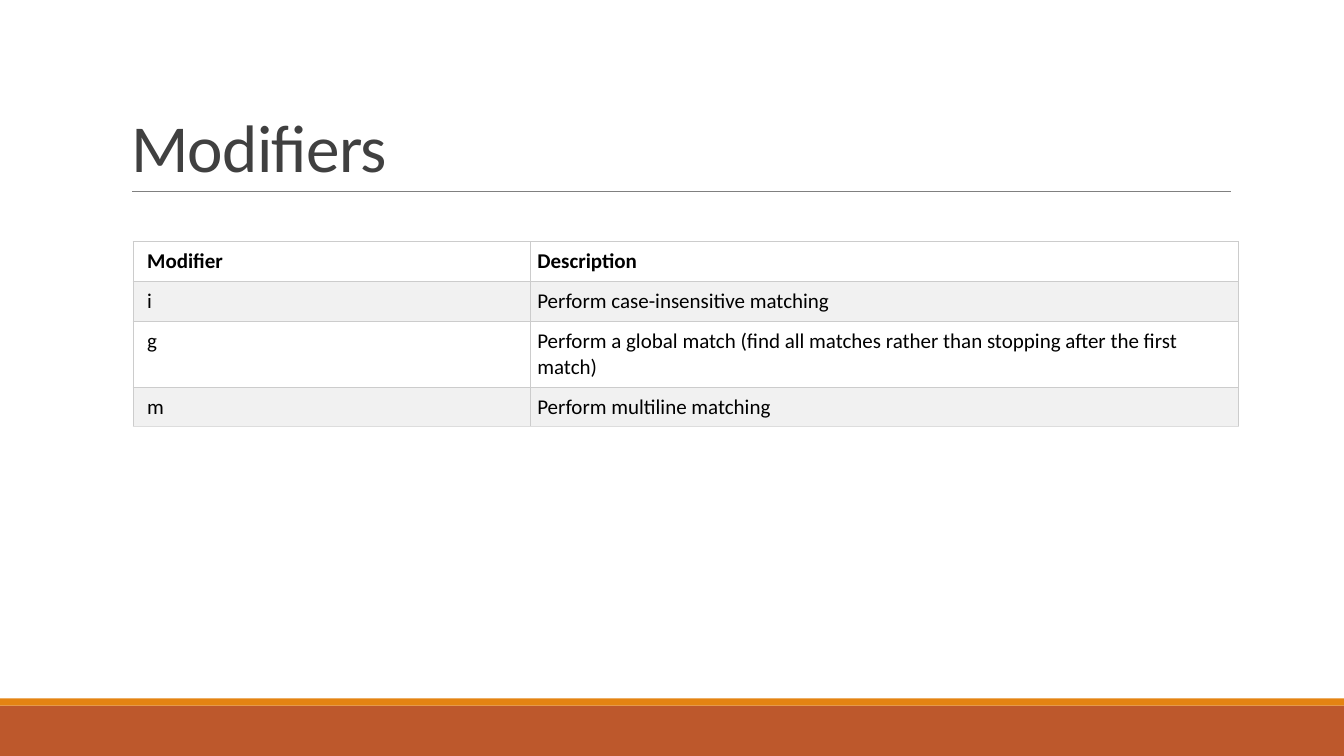
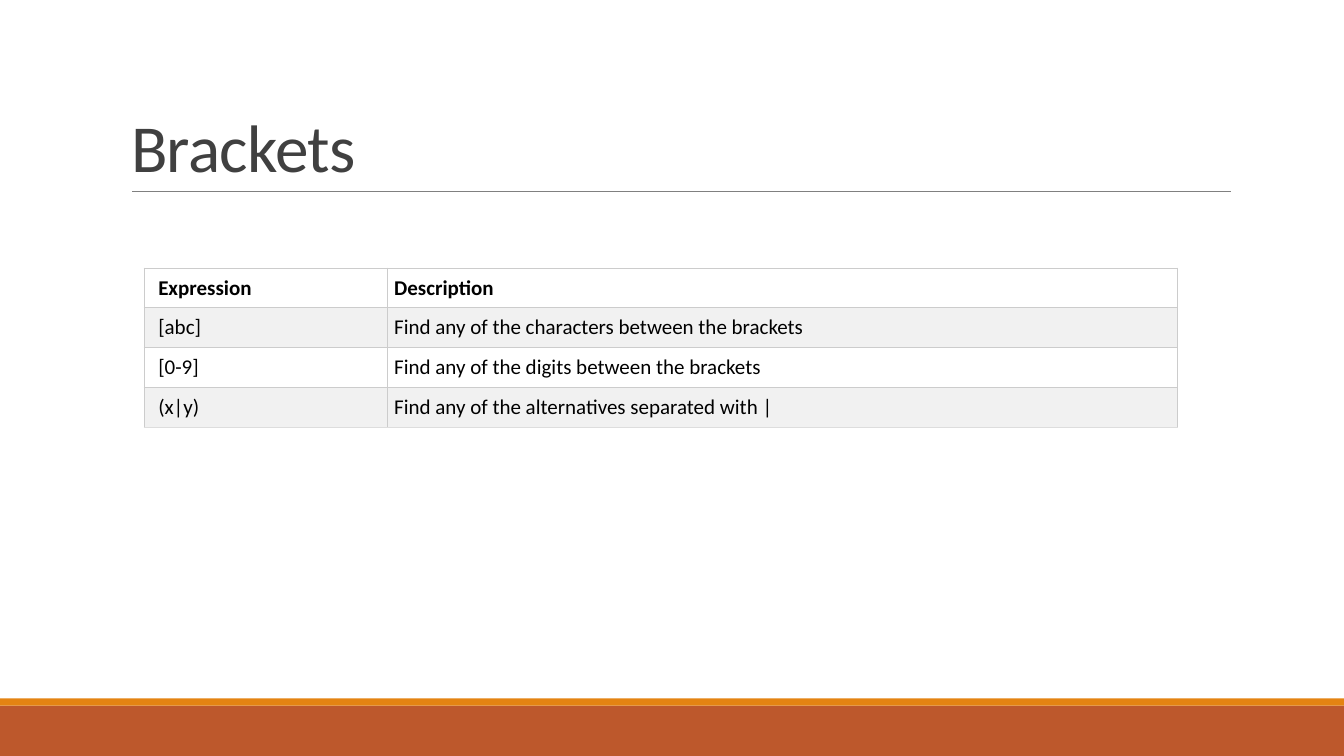
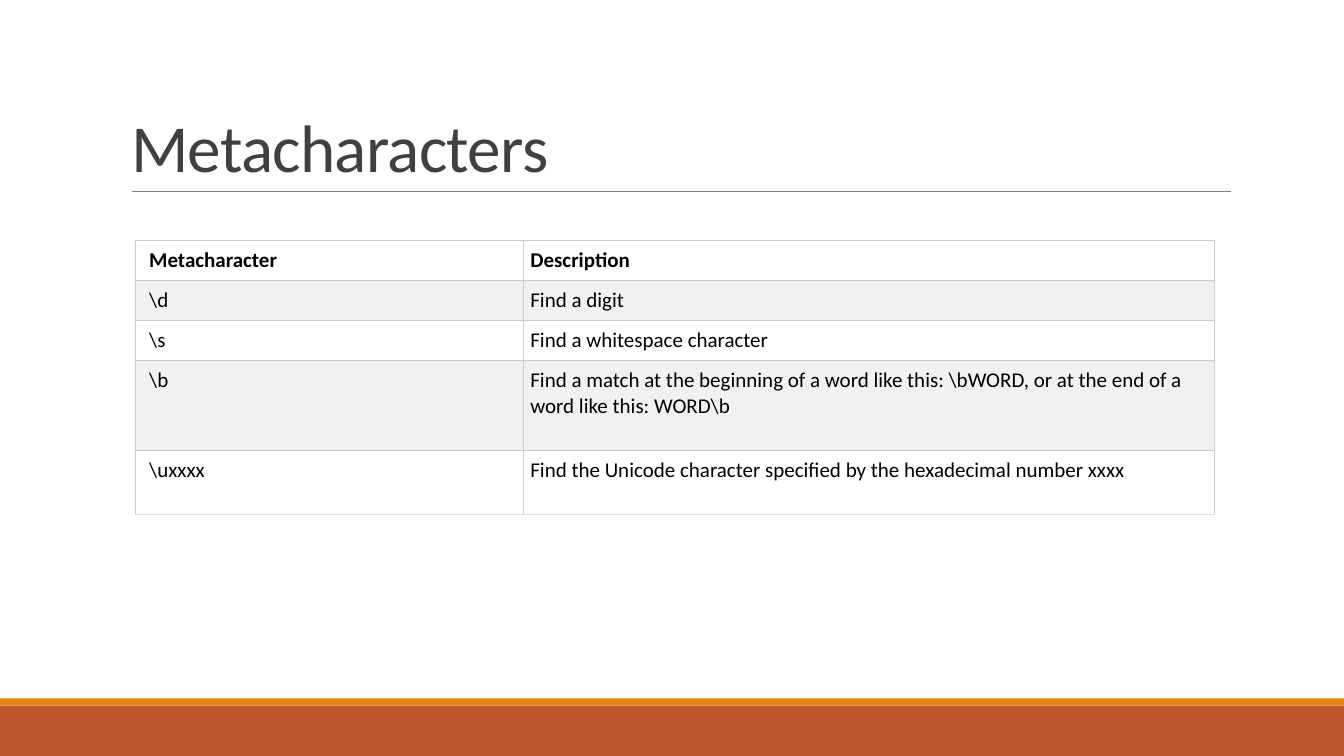
from dataclasses import dataclass

from lxml import etree
from pptx import Presentation
from pptx.dml.color import RGBColor
from pptx.enum.shapes import MSO_CONNECTOR, MSO_SHAPE
from pptx.enum.text import MSO_ANCHOR, MSO_AUTO_SIZE, PP_ALIGN
from pptx.oxml.ns import qn
from pptx.util import Pt

RECTANGLE = MSO_SHAPE.RECTANGLE
STRAIGHT = MSO_CONNECTOR.STRAIGHT
BOTTOM, TOP = MSO_ANCHOR.BOTTOM, MSO_ANCHOR.TOP
LEFT = PP_ALIGN.LEFT
NO_AUTOFIT = MSO_AUTO_SIZE.NONE
TITLE_ONLY = 5

SLIDES = [
    {
        "title": "Modifiers",
        "origin": (132, 240),
        "columns": (394, 702),
        "heights": (39, 39, 64, 39),
        "rows": [
            ("Modifier", "Description"),
            ("i", "Perform case-insensitive matching"),
            ("g", "Perform a global match (find all matches rather than stopping after the first match)"),
            ("m", "Perform multiline matching"),
        ],
    },
    {
        "title": "Brackets",
        "origin": (143, 266),
        "columns": (241, 784),
        "heights": (39, 39, 39, 39),
        "rows": [
            ("Expression", "Description"),
            ("[abc]", "Find any of the characters between the brackets"),
            ("[0-9]", "Find any of the digits between the brackets"),
            ("(x|y)", "Find any of the alternatives separated with |"),
        ],
    },
    {
        "title": "Metacharacters",
        "origin": (134, 239),
        "columns": (385, 686),
        "heights": (39, 39, 39, 89, 64),
        "rows": [
            ("Metacharacter", "Description"),
            (r"\d", "Find a digit"),
            (r"\s", "Find a whitespace character"),
            (r"\b", r"Find a match at the beginning of a word like this: \bWORD, or at the end of a word like this: WORD\b"),
            (r"\uxxxx", "Find the Unicode character specified by the hexadecimal number xxxx"),
        ],
    },
]

SLIDE_SIZE = (1333, 750)
TITLE_BOX = (120, 31, 1100, 159)
RULE_ENDS = (131, 190, 1221, 190)
FOOTER_TOP = 700
ACCENT_HEIGHT = 7
FIRST_INSET, INSET = 14, 7


@dataclass(frozen=True)
class Theme:
    font: str = "Calibri"
    footer: str = "BD582C"
    accent: str = "E48312"
    rule: str = "808080"
    title: str = "404040"
    text: str = "000000"
    row_fills: tuple = ("FFFFFF", "F1F1F1")
    border: str = "CCCCCC"
    last_border: str = "DDDDDD"
    title_size: int = 48
    cell_size: int = 15
    rule_width: float = 0.5
    border_width: float = 0.75
    title_spacing: float = -0.5
    title_leading: float = 0.85


THEME = Theme()


def px(*lengths):
    return [length * 9144 for length in lengths]


def rgb(color):
    return RGBColor.from_string(color)


def add_run(paragraph, text, size, color, bold=False):
    run = paragraph.add_run()
    run.text = text
    run.font.name = THEME.font
    run.font.size = Pt(size)
    run.font.bold = bold
    run.font.color.rgb = rgb(color)
    return run


def style_layout(layout, slide):
    width, height = SLIDE_SIZE
    title = layout.placeholders[0]
    title.left, title.top, title.width, title.height = px(*TITLE_BOX)

    decorations = []
    for top, depth, color in (
        (FOOTER_TOP, height - FOOTER_TOP, THEME.footer),
        (FOOTER_TOP - ACCENT_HEIGHT, ACCENT_HEIGHT, THEME.accent),
    ):
        band = slide.shapes.add_shape(RECTANGLE, *px(0, top, width, depth))
        band.shadow.inherit = False
        band.fill.solid()
        band.fill.fore_color.rgb = rgb(color)
        band.line.fill.background()
        decorations.append(band)

    rule = slide.shapes.add_connector(STRAIGHT, *px(*RULE_ENDS))
    rule.line.color.rgb = rgb(THEME.rule)
    rule.line.width = Pt(THEME.rule_width)
    etree.SubElement(rule.element.spPr, qn("a:effectLst"))
    decorations.append(rule)

    next_id = max(shape.shape_id for shape in layout.shapes) + 1
    for shape_id, decoration in enumerate(decorations, next_id):
        decoration.element.xpath(".//p:cNvPr")[0].set("id", str(shape_id))
        layout.shapes.element.append(decoration.element)


def fill_title(title, text):
    frame = title.text_frame
    frame.auto_size = NO_AUTOFIT
    frame.vertical_anchor = BOTTOM
    paragraph = frame.paragraphs[0]
    paragraph.alignment = LEFT
    paragraph.line_spacing = THEME.title_leading
    run = add_run(paragraph, text, THEME.title_size, THEME.title)
    run.font.element.set("spc", str(round(THEME.title_spacing * 100))) if hasattr(
        run.font, "element"
    ) else run._r.get_or_add_rPr().set("spc", str(round(THEME.title_spacing * 100)))


def set_borders(cell, bottom_color):
    properties = cell._tc.get_or_add_tcPr()
    sides = dict.fromkeys(("lnL", "lnR", "lnT"), THEME.border) | {"lnB": bottom_color}
    for side, color in sides.items():
        border = etree.SubElement(properties, qn(f"a:{side}"), w=str(Pt(THEME.border_width)))
        fill = etree.SubElement(border, qn("a:solidFill"))
        etree.SubElement(fill, qn("a:srgbClr"), val=color)


def add_reference_table(slide, content):
    rows, columns, heights = content["rows"], content["columns"], content["heights"]
    bounds = px(*content["origin"], sum(columns), sum(heights))
    table = slide.shapes.add_table(len(rows), len(columns), *bounds).table
    table.first_row = table.horz_banding = False
    for column, width in zip(table.columns, px(*columns)):
        column.width = width
    for row_index, (row, height, texts) in enumerate(zip(table.rows, px(*heights), rows)):
        row.height = height
        is_last = row_index == len(rows) - 1
        for column_index, (cell, text) in enumerate(zip(row.cells, texts)):
            set_borders(cell, THEME.last_border if is_last else THEME.border)
            cell.fill.solid()
            cell.fill.fore_color.rgb = rgb(THEME.row_fills[row_index % 2])
            left_inset = INSET if column_index else FIRST_INSET
            cell.margin_left, cell.margin_top, cell.margin_right, cell.margin_bottom = px(
                left_inset, INSET, INSET, INSET
            )
            cell.vertical_anchor = TOP
            paragraph = cell.text_frame.paragraphs[0]
            add_run(paragraph, text, THEME.cell_size, THEME.text, bold=row_index == 0)


def main():
    presentation = Presentation()
    presentation.slide_width, presentation.slide_height = px(*SLIDE_SIZE)
    layout = presentation.slide_layouts[TITLE_ONLY]
    for index, content in enumerate(SLIDES):
        slide = presentation.slides.add_slide(layout)
        if index == 0:
            style_layout(layout, slide)
        fill_title(slide.shapes.title, content["title"])
        add_reference_table(slide, content)
    presentation.save("out.pptx")


if __name__ == "__main__":
    main()
